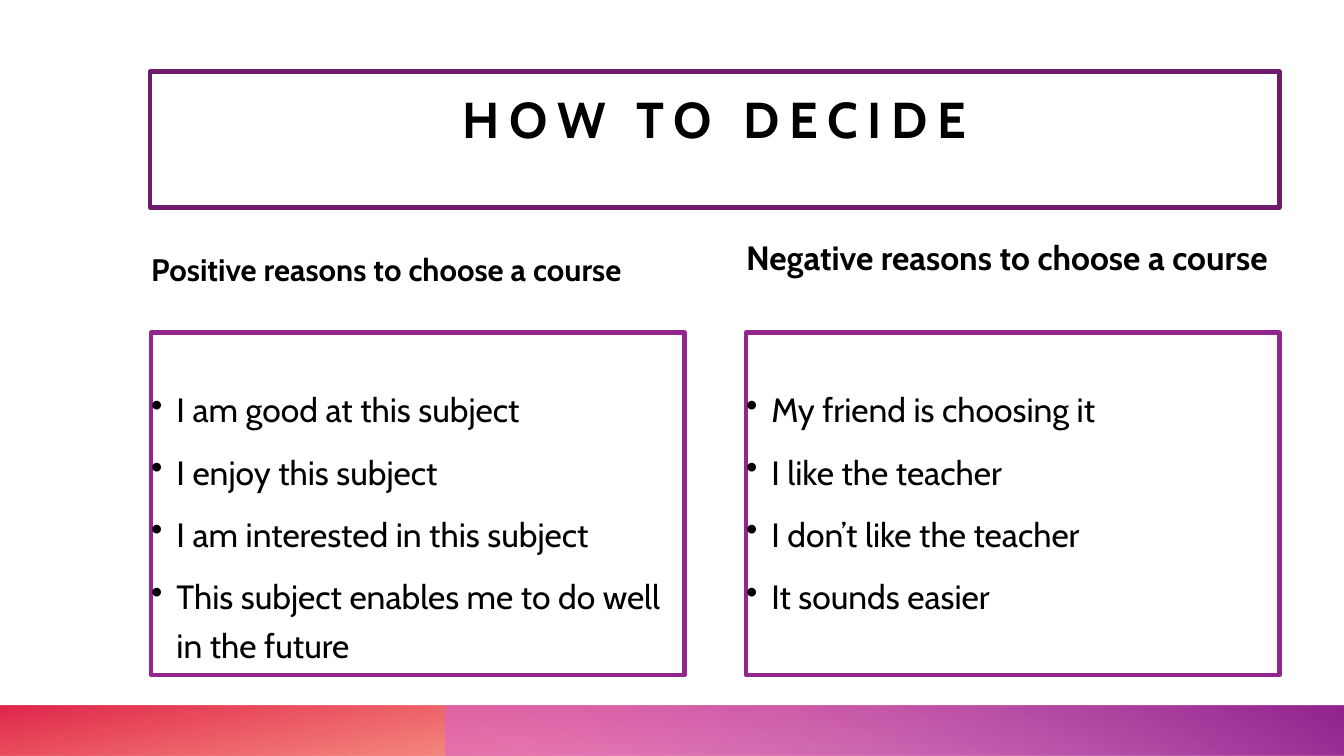
from dataclasses import dataclass

import lxml.etree
import pptx
import pptx.dml.color
import pptx.enum.shapes
import pptx.enum.text
import pptx.oxml
import pptx.oxml.ns
import pptx.util
from pptx.util import Inches, Pt


@dataclass(frozen=True)
class Theme:
    font: str = "Cabin"
    text: str = "000000"
    title_border: str = "6D1B6A"
    list_border: str = "93258E"
    border_width: float = 3
    title_size: float = 36
    list_size: float = 24
    # Stops are position, colour and opacity, all but the colour in percent.
    warm_band: tuple = ((14, "FE4A00", 28), (100, "DA002F", 85))
    purple_band: tuple = ((9, "D861D4", 55), (99, "92248E", 100))


THEME = Theme()
COLUMN_WIDTH = 5.29
COLUMNS = (
    (1.5, "Positive reasons to choose a course", 22.2, 0.17, 1.0, (
        "I am good at this subject",
        "I enjoy this subject",
        "I am interested in this subject",
        "This subject enables me to do well in the future",
    )),
    (7.4, "Negative reasons to choose a course", 24, 0, 1.1, (
        "My friend is choosing it",
        "I like the teacher",
        "I don’t like the teacher",
        "It sounds easier",
    )),
)


def rgb(value):
    return pptx.dml.color.RGBColor.from_string(value)


def add_band(slide, left, stops, angle, rotation=0):
    """Add a mirrored gradient bar from left to the slide's right edge."""
    shape = slide.shapes.add_shape(
        pptx.enum.shapes.MSO_SHAPE.RECTANGLE,
        Inches(left), Inches(7), Inches(13.33 - left), Inches(0.5))
    shape.shadow.inherit = False
    shape.line.fill.background()
    shape.rotation = rotation
    properties = shape._element.spPr
    properties.find(pptx.oxml.ns.qn("a:xfrm")).set("flipH", "1")
    stop_xml = "".join(
        f'<a:gs pos="{position * 1000}"><a:srgbClr val="{colour}">'
        f'<a:alpha val="{opacity * 1000}"/></a:srgbClr></a:gs>'
        for position, colour, opacity in stops)
    gradient = pptx.oxml.parse_xml(
        f'<a:gradFill {pptx.oxml.ns.nsdecls("a")} rotWithShape="1">'
        f'<a:gsLst>{stop_xml}</a:gsLst>'
        f'<a:lin ang="{angle * 60000}" scaled="0"/></a:gradFill>')
    properties.find(pptx.oxml.ns.qn("a:prstGeom")).addnext(gradient)


def add_text_box(slide, left, top, width, height, inset_top=0, border=None):
    box = slide.shapes.add_textbox(
        Inches(left), Inches(top), Inches(width), Inches(height))
    frame = box.text_frame
    frame.word_wrap = True
    frame.vertical_anchor = pptx.enum.text.MSO_ANCHOR.TOP
    frame.margin_left = frame.margin_right = frame.margin_bottom = 0
    frame.margin_top = Inches(inset_top)
    if border:
        box.line.color.rgb = rgb(border)
        box.line.width = Pt(THEME.border_width)
    return frame


def add_run(paragraph, text, size, bold=False):
    run = paragraph.add_run()
    run.text = text
    run.font.name = THEME.font
    run.font.size = Pt(size)
    run.font.bold = bold
    run.font.color.rgb = rgb(THEME.text)
    return run


def add_title(slide, text):
    frame = add_text_box(slide, 1.49, 0.71, 11.2, 1.35, 0.16, THEME.title_border)
    paragraph = frame.paragraphs[0]
    paragraph.alignment = pptx.enum.text.PP_ALIGN.CENTER
    run = add_run(paragraph, text, THEME.title_size, bold=True)
    run._r.get_or_add_rPr().set("spc", "700")


def add_heading(slide, left, text, size, inset_top, line_spacing):
    frame = add_text_box(slide, left, 2.31, COLUMN_WIDTH, 0.9, inset_top)
    paragraph = frame.paragraphs[0]
    paragraph.line_spacing = line_spacing
    add_run(paragraph, text, size, bold=True)


def add_bullet_list(slide, left, items):
    frame = add_text_box(
        slide, left, 3.3, COLUMN_WIDTH, 3.4, 0.48, THEME.list_border)
    for index, item in enumerate(items):
        paragraph = frame.add_paragraph() if index else frame.paragraphs[0]
        paragraph.line_spacing = 1.2
        paragraph.space_before = Pt(10 if index else 0)
        properties = paragraph._p.get_or_add_pPr()
        properties.set("marL", str(Inches(0.25)))
        properties.set("indent", str(Inches(-0.25)))
        bullet = lxml.etree.SubElement(properties, pptx.oxml.ns.qn("a:buChar"))
        bullet.set("char", "•")
        add_run(paragraph, item, THEME.list_size)


def main():
    presentation = pptx.Presentation()
    presentation.slide_width = Inches(13.33)
    presentation.slide_height = Inches(7.5)
    slide = presentation.slides.add_slide(presentation.slide_layouts[6])

    add_band(slide, 0, THEME.warm_band, angle=100, rotation=180)
    add_band(slide, 4.42, THEME.purple_band, angle=240)
    for left, heading, size, inset_top, line_spacing, reasons in COLUMNS:
        add_heading(slide, left, heading, size, inset_top, line_spacing)
        add_bullet_list(slide, left, reasons)
    add_title(slide, "HOW TO DECIDE")

    presentation.save("out.pptx")


if __name__ == "__main__":
    main()
